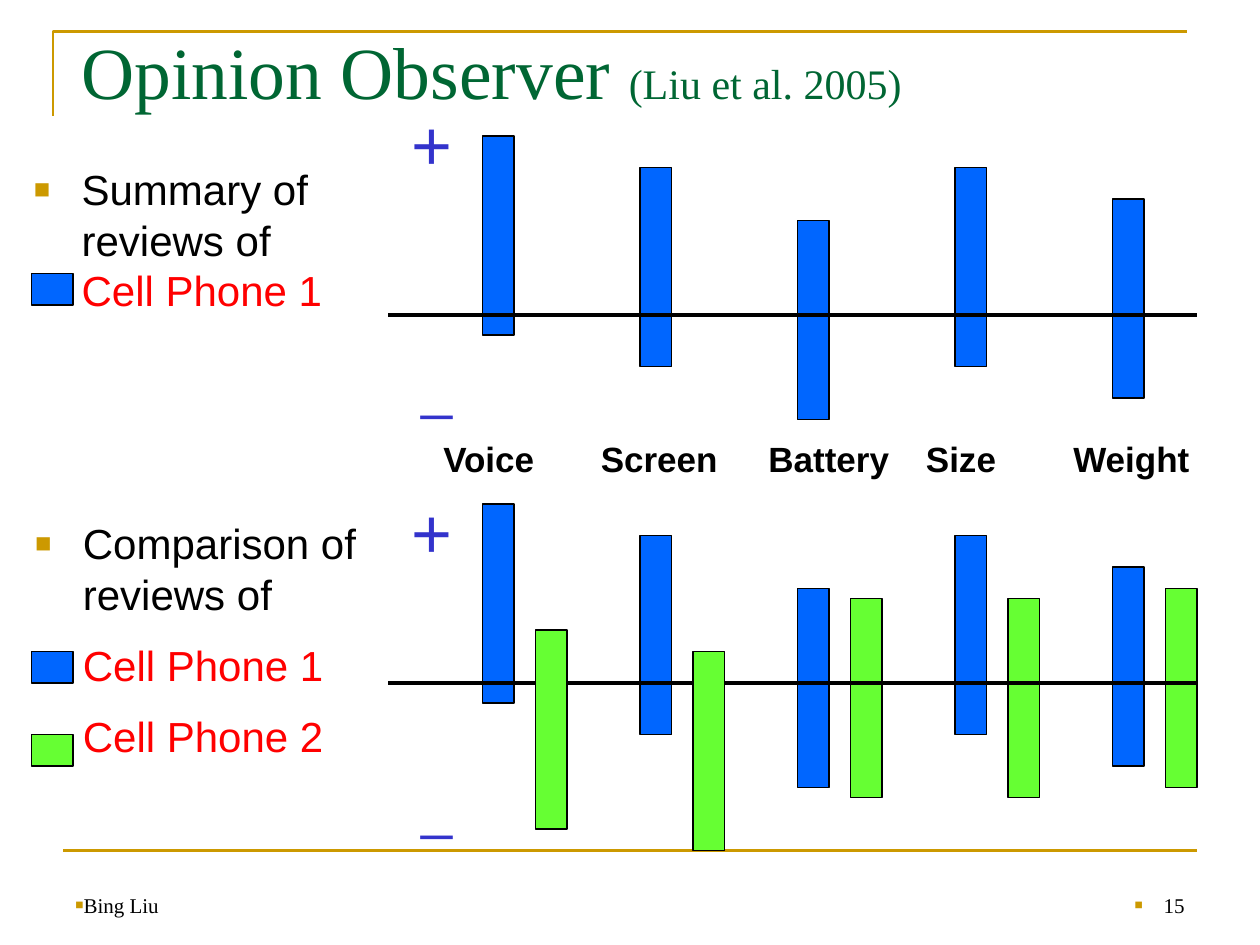
"""Build the opinion comparison slide with its two bar diagrams."""
from typing import NamedTuple

import lxml.etree
import pptx
import pptx.dml.color
import pptx.enum.shapes
import pptx.enum.text
import pptx.oxml.ns
import pptx.util

Inches = pptx.util.Inches
Pt = pptx.util.Pt
RGBColor = pptx.dml.color.RGBColor
Align = pptx.enum.text.PP_ALIGN
Anchor = pptx.enum.text.MSO_ANCHOR
qn = pptx.oxml.ns.qn

GOLD = RGBColor(0xCC, 0x99, 0x00)
GREEN_TITLE = RGBColor(0x00, 0x66, 0x33)
PHONE_1 = RGBColor(0x00, 0x66, 0xFF)
PHONE_2 = RGBColor(0x66, 0xFF, 0x33)
SIGN = RGBColor(0x33, 0x33, 0xCC)
RED = RGBColor(0xFF, 0x00, 0x00)
BLACK = RGBColor(0x00, 0x00, 0x00)

SANS = "Arial"
SERIF = "Times New Roman"
BAR_WIDTH, BAR_HEIGHT = 0.25, 1.58
FIRST_BAR, BAR_STEP, PAIR_STEP = 3.83, 1.25, 0.42
UPPER_AXIS, LOWER_AXIS = 2.5, 5.42
INDENT = 0.38


class Feature(NamedTuple):
    name: str
    label_left: float
    label_width: float
    rise_1: float
    rise_2: float
    second_in_front: bool


class Style(NamedTuple):
    size: float
    color: RGBColor = BLACK
    font: str = SANS
    bold: bool = False


FEATURES = [
    Feature("Voice", 3.42, 1.83, 1.42, 0.42, True),
    Feature("Screen", 4.67, 1.83, 1.17, 0.25, True),
    Feature("Battery", 6, 1.83, 0.75, 0.67, False),
    Feature("Size", 7.25, 0.92, 1.17, 0.67, False),
    Feature("Weight", 8.42, 1.17, 0.92, 0.75, False),
]
BODY = Style(24)
PHONE_NAME = Style(24, RED)
FOOTER = Style(12, font=SERIF)


def format_span(span, style: Style) -> None:
    span.font.size = Pt(style.size)
    span.font.name = style.font
    span.font.bold = style.bold
    span.font.color.rgb = style.color


def add_text(page, left: float, top: float, width: float, height: float,
             text: str, style: Style, anchor=Anchor.TOP):
    box = page.shapes.add_textbox(Inches(left), Inches(top), Inches(width), Inches(height))
    frame = box.text_frame
    frame.word_wrap = True
    frame.vertical_anchor = anchor
    frame.text = text
    for para in frame.paragraphs:
        for span in para.runs:
            format_span(span, style)
    return frame


def set_indent(para, left: float, first: float) -> None:
    properties = para._p.get_or_add_pPr()
    properties.set("marL", str(Inches(left)))
    properties.set("indent", str(Inches(first)))


def add_bullet(para, hang: float) -> None:
    set_indent(para, hang, -hang)
    properties = para._p.get_or_add_pPr()
    color = lxml.etree.SubElement(properties, qn("a:buClr"))
    lxml.etree.SubElement(color, qn("a:srgbClr"), val=str(GOLD))
    lxml.etree.SubElement(properties, qn("a:buSzPct"), val="65000")
    lxml.etree.SubElement(properties, qn("a:buFont"), typeface=SANS)
    lxml.etree.SubElement(properties, qn("a:buChar"), char="■")


def add_block(page, left: float, top: float, width: float, height: float,
              color: RGBColor) -> None:
    block = page.shapes.add_shape(pptx.enum.shapes.MSO_SHAPE.RECTANGLE, Inches(left),
                                  Inches(top), Inches(width), Inches(height))
    block.shadow.inherit = False
    block.fill.solid()
    block.fill.fore_color.rgb = color
    block.line.color.rgb = BLACK
    block.line.width = Pt(0.75)


def add_rule(page, left: float, right: float, top: float, color: RGBColor,
             weight: float) -> None:
    rule = page.shapes.add_connector(pptx.enum.shapes.MSO_CONNECTOR.STRAIGHT, Inches(left),
                                     Inches(top), Inches(right), Inches(top))
    rule.line.color.rgb = color
    rule.line.width = Pt(weight)
    lxml.etree.SubElement(rule._element.spPr, qn("a:effectLst"))


def add_corner(page) -> None:
    builder = page.shapes.build_freeform(Inches(0.42), Inches(0.92))
    builder.add_line_segments([(Inches(0.42), Inches(0.25)), (Inches(9.42), Inches(0.25))],
                              close=False)
    corner = builder.convert_to_shape()
    corner.shadow.inherit = False
    corner.fill.background()
    corner.line.color.rgb = GOLD
    corner.line.width = Pt(1.5)


def add_second_bars(page, in_front: bool) -> None:
    for index, feature in enumerate(FEATURES):
        if feature.second_in_front == in_front:
            add_block(page, FIRST_BAR + index * BAR_STEP + PAIR_STEP,
                      LOWER_AXIS - feature.rise_2, BAR_WIDTH, BAR_HEIGHT, PHONE_2)


def add_first_bars(page, axis: float) -> None:
    for index, feature in enumerate(FEATURES):
        add_block(page, FIRST_BAR + index * BAR_STEP, axis - feature.rise_1,
                  BAR_WIDTH, BAR_HEIGHT, PHONE_1)
    add_rule(page, 3.08, 9.5, axis, BLACK, 2.25)


def add_signs(page, plus_top: float, minus_top: float) -> None:
    add_text(page, 3.17, plus_top, 0.75, 0.77, "+", Style(40, SIGN))
    add_text(page, 3.25, minus_top, 0.75, 0.63, "_", Style(32, SIGN))


def add_frame(page) -> None:
    add_corner(page)
    add_rule(page, 0.5, 9.5, 6.75, GOLD, 1.5)
    author = add_text(page, 0.5, 6.83, 6.08, 0.5, "Bing Liu", FOOTER, Anchor.BOTTOM)
    add_bullet(author.paragraphs[0], 0)
    number = add_text(page, 7.17, 6.83, 2.33, 0.5, "15", FOOTER, Anchor.BOTTOM)
    number.paragraphs[0].alignment = Align.RIGHT
    add_bullet(number.paragraphs[0], 0.23)
    title = add_text(page, 0.55, 0.16, 9.29, 1.25, "Opinion Observer ",
                     Style(42, GREEN_TITLE, SERIF))
    citation = title.paragraphs[0].add_run()
    citation.text = "(Liu et al. 2005)"
    format_span(citation, Style(24, GREEN_TITLE, SERIF))


def add_summary(page) -> None:
    add_first_bars(page, UPPER_AXIS)
    summary = add_text(page, 0.17, 1.25, 3, 1.31,
                       "Summary of reviews of\vCell Phone 1", BODY).paragraphs[0]
    add_bullet(summary, INDENT)
    format_span(summary.runs[-1], PHONE_NAME)
    for feature in FEATURES:
        add_text(page, feature.label_left, 3.42, feature.label_width, 0.5,
                 feature.name, Style(20, bold=True))
    add_signs(page, 0.75, 2.75)
    add_block(page, 0.25, 2.17, 0.33, 0.25, PHONE_1)


def add_comparison(page) -> None:
    frame = add_text(page, 0.18, 4.06, 3.17, 2.12,
                     "Comparison of reviews of\nCell Phone 1\nCell Phone 2", BODY)
    heading, *phones = frame.paragraphs
    add_bullet(heading, INDENT)
    for para in phones:
        set_indent(para, INDENT, 0)
        para.space_before = Pt(12)
        format_span(para.runs[0], PHONE_NAME)
    for top, color in ((5.17, PHONE_1), (5.83, PHONE_2)):
        add_block(page, 0.25, top, 0.33, 0.25, color)
    add_second_bars(page, in_front=False)
    add_first_bars(page, LOWER_AXIS)
    add_second_bars(page, in_front=True)
    add_signs(page, 3.83, 6.08)


def main() -> None:
    deck = pptx.Presentation()
    deck.slide_width, deck.slide_height = Inches(10), Inches(7.5)
    page = deck.slides.add_slide(deck.slide_layouts[6])
    add_frame(page)
    add_summary(page)
    add_comparison(page)
    deck.save("out.pptx")


if __name__ == "__main__":
    main()
